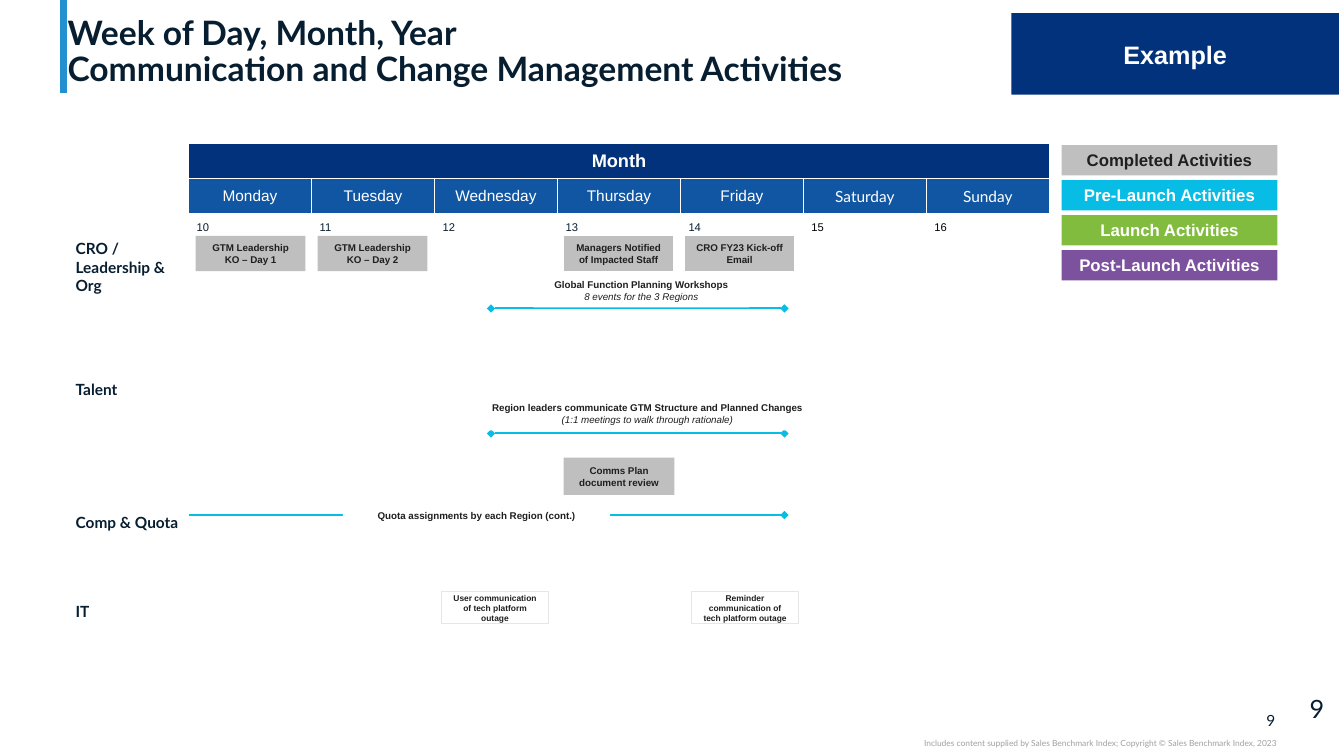
from lxml import etree
from pptx import Presentation
from pptx import util as u
from pptx.dml.color import RGBColor
from pptx.enum import shapes, text
from pptx.oxml import ns

NAVY, BLUE, INK, CYAN = "03327C", "1156A3", "071E31", "07BCE5"
GREY, DARK, WHITE = "BFBFBF", "1F1F1F", "FFFFFF"
LEFT, CENTER, RIGHT = text.PP_ALIGN.LEFT, text.PP_ALIGN.CENTER, text.PP_ALIGN.RIGHT
TOP, MIDDLE, BOTTOM = text.MSO_ANCHOR.TOP, text.MSO_ANCHOR.MIDDLE, text.MSO_ANCHOR.BOTTOM


def color(value):
    """Turn a hex string into a colour."""
    return RGBColor.from_string(value)


def lengths(*values):
    """Turn numbers of inches into lengths."""
    return [u.Inches(value) for value in values]


def set_font(font, size, ink, name="Arial", bold=False, italic=False):
    """Apply one set of character formats."""
    formats = {"size": u.Pt(size), "name": name, "bold": bold, "italic": italic}
    for attribute, value in formats.items():
        setattr(font, attribute, value)
    font.color.rgb = color(ink)


def set_frame(frame, anchor, margins):
    """Set wrapping, anchor and margins (left, top, right, bottom)."""
    formats = {"word_wrap": True, "vertical_anchor": anchor}
    sides = ("margin_left", "margin_top", "margin_right", "margin_bottom")
    formats.update(zip(sides, lengths(*margins)))
    for attribute, value in formats.items():
        setattr(frame, attribute, value)


def add_run(paragraph, words, align, **font):
    """Write aligned, formatted words in a paragraph."""
    paragraph.alignment = align
    run = paragraph.add_run()
    run.text = words
    set_font(run.font, **font)


def add_box(slide, box, words, fill=WHITE, line=None, size=7, ink=DARK, side=0.1, detail=None):
    """Add a filled rectangle with a bold label and an optional italic detail."""
    shape = slide.shapes.add_shape(shapes.MSO_SHAPE.RECTANGLE, *lengths(*box))
    shape.shadow.inherit = False
    shape.fill.solid()
    shape.fill.fore_color.rgb = color(fill)
    if line:
        shape.line.color.rgb = color(line)
        shape.line.width = u.Pt(0.75)
    else:
        shape.line.fill.background()
    frame = shape.text_frame
    set_frame(frame, MIDDLE, (side, 0.05, side, 0.05))
    add_run(frame.paragraphs[0], words, CENTER, size=size, ink=ink, bold=True)
    if detail:
        add_run(frame.add_paragraph(), detail, CENTER, size=size, ink=ink, italic=True)


def add_label(slide, box, words, size, ink, align, anchor):
    """Add a plain text box without margins."""
    frame = slide.shapes.add_textbox(*lengths(*box)).text_frame
    set_frame(frame, anchor, (0, 0, 0, 0))
    add_run(frame.paragraphs[0], words, align, size=size, ink=ink, name="Lato")


def add_line(slide, start, end, ink, width, ends=()):
    """Add a straight line with diamonds at the named ends."""
    straight = shapes.MSO_CONNECTOR.STRAIGHT
    connector = slide.shapes.add_connector(straight, *lengths(*start, *end))
    connector.line.color.rgb = color(ink)
    connector.line.width = u.Pt(width)
    for name in ends:
        etree.SubElement(connector.line._get_or_add_ln(), ns.qn(f"a:{name}"), type="diamond")
    etree.SubElement(connector._element.spPr, ns.qn("a:effectLst"))


def add_heading(slide, box):
    """Fill the title placeholder, with its accent line and the example tag."""
    left, top, width, height = box
    add_line(slide, (left - 0.04, 0), (left - 0.04, 0.92), "2391CF", 5)
    title = slide.shapes.title
    for attribute, value in zip(("left", "top", "width", "height"), lengths(*box)):
        setattr(title, attribute, value)
    set_frame(title.text_frame, BOTTOM, (0, 0, 0, 0))
    title.text_frame.auto_size = text.MSO_AUTO_SIZE.NONE
    paragraph = title.text_frame.paragraphs[0]
    paragraph.line_spacing = 0.9
    font = {"size": 24, "ink": INK, "name": "Lato", "bold": True}
    add_run(paragraph, "Week of Day, Month, Year", LEFT, **font)
    paragraph.add_line_break()
    add_run(paragraph, "Communication and Change Management Activities", LEFT, **font)
    add_box(slide, (left + 9.36, top + 0.09, 3.25, 0.81), "Example", NAVY, size=18, ink=WHITE)


def format_cell(cell):
    """Clear the fill of a cell and give it thin white borders."""
    cell.fill.background()
    properties = cell._tc.get_or_add_tcPr()
    for index, side in enumerate(("lnL", "lnR", "lnT", "lnB")):
        border = etree.Element(ns.qn(f"a:{side}"), w=str(u.Pt(0.75)))
        solid = etree.SubElement(border, ns.qn("a:solidFill"))
        etree.SubElement(solid, ns.qn("a:srgbClr"), val=WHITE)
        properties.insert(index, border)
    cell.text_frame.paragraphs[0]._p.get_or_add_endParaRPr().set("sz", "800")


def fill_cell(cell, words, align, anchor, fill=None, top=0.04, bottom=0.04, **font):
    """Write one calendar cell."""
    margins = zip(("left", "top", "right", "bottom"), lengths(0.08, top, 0.08, bottom))
    for side, value in margins:
        setattr(cell, f"margin_{side}", value)
    cell.vertical_anchor = anchor
    if fill:
        cell.fill.solid()
        cell.fill.fore_color.rgb = color(fill)
    add_run(cell.text_frame.paragraphs[0], words, align, **font)


def add_calendar(slide, box):
    """Add the week table: month, days, dates and work streams."""
    row_heights = (0.35, 0.35, 0.21, 0.85, 1.29, 1.35, 0.4)
    column_widths = (1.2,) + (1.22,) * 7
    table = slide.shapes.add_table(7, 8, *lengths(*box)).table
    table.first_row = table.horz_banding = False
    for row, height in zip(table.rows, lengths(*row_heights)):
        row.height = height
    for column, width in zip(table.columns, lengths(*column_widths)):
        column.width = width
    for cell in table.iter_cells():
        format_cell(cell)
    table.cell(0, 1).merge(table.cell(0, 7))
    table.cell(2, 0).merge(table.cell(3, 0))
    fill_cell(table.cell(0, 1), "Month", CENTER, MIDDLE, NAVY, size=13, ink=WHITE, bold=True)
    days = ("Monday", "Tuesday", "Wednesday", "Thursday", "Friday", "Saturday", "Sunday")
    for column, day in enumerate(days, 1):
        weekend = column > 5
        fill_cell(table.cell(1, column), day, CENTER, MIDDLE, BLUE, size=11, ink=WHITE,
                  name="Lato" if weekend else "Arial")
        fill_cell(table.cell(2, column), str(9 + column), LEFT, TOP, top=0.08, bottom=0,
                  size=8, ink="000000" if weekend else INK)
    streams = {2: "CRO / Leadership & Org", 4: "Talent", 5: "Comp & Quota", 6: "IT"}
    for row, stream in streams.items():
        top, bottom = (0.04, 0.04) if row == 2 else (0.08, 0)
        fill_cell(table.cell(row, 0), stream, LEFT, MIDDLE, WHITE, top, bottom,
                  size=11, ink=INK, name="Lato", bold=True)


def add_activities(slide, box):
    """Place the activity boxes and spans over the calendar."""
    left, top = box[:2]
    activities = (
        (1.27, 0.92, 1.09, 0.35, "GTM Leadership KO – Day 1", GREY, None, 7),
        (2.48, 0.92, 1.09, 0.35, "GTM Leadership KO – Day 2", GREY, None, 7),
        (4.92, 0.92, 1.09, 0.35, "Managers Notified of Impacted Staff", GREY, WHITE, 7),
        (6.12, 0.92, 1.09, 0.35, "CRO FY23 Kick-off Email", GREY, WHITE, 7),
        (4.92, 3.12, 1.1, 0.37, "Comms Plan document review", GREY, None, 7),
        (3.71, 4.45, 1.06, 0.32, "User communication of tech platform outage", WHITE, "E7E6E6", 6),
        (6.19, 4.45, 1.06, 0.32, "Reminder communication of tech platform outage", WHITE, "E7E6E6", 6),
    )
    for x, y, width, height, *label in activities:
        add_box(slide, (left + x, top + y, width, height), *label)
    both = ("headEnd", "tailEnd")
    spans = (
        (4.2, 1.64, both, (4.62, 1.29, 2.14, 0.34), "Global Function Planning Workshops",
         "8 events for the 3 Regions"),
        (4.2, 2.88, both, (3.67, 2.51, 4.16, 0.34),
         "Region leaders communicate GTM Structure and Planned Changes",
         "(1:1 meetings to walk through rationale)"),
        (1.2, 3.69, both[1:], (2.73, 3.6, 2.65, 0.18),
         "Quota assignments by each Region (cont.)", None),
    )
    for start, y, ends, (x, label_y, width, height), words, detail in spans:
        add_line(slide, (left + start, top + y), (left + 7.11, top + y), CYAN, 1.5, ends)
        add_box(slide, (left + x, top + label_y, width, height), words, detail=detail)


def add_legend(slide, box):
    """Stack the four activity phases."""
    left, top, width, height = box
    phases = (("Completed", GREY, DARK), ("Pre-Launch", CYAN, WHITE),
              ("Launch", "82BC3F", WHITE), ("Post-Launch", "7C519E", WHITE))
    for index, (phase, fill, ink) in enumerate(phases):
        add_box(slide, (left, top + index * 0.347, width, height), f"{phase} Activities",
                fill, size=12, ink=ink, side=0.03)


def add_footer(slide, box):
    """Add the page numbers and the copyright line."""
    left, top, width, height = box
    add_label(slide, (left + 4.82, top + 0.12, 0.33, 0.19), "9", 11, INK, RIGHT, MIDDLE)
    add_label(slide, (left, top + 0.39, 5.16, 0.1),
              "Includes content supplied by Sales Benchmark Index; Copyright © Sales Benchmark Index, 2023",
              6, "A0A0A0", RIGHT, TOP)
    add_label(slide, (left + width - 0.34, top, 0.34, 0.2), "9", 18, INK, LEFT, MIDDLE)


def main():
    """Build and save the weekly plan slide."""
    presentation = Presentation()
    presentation.slide_width, presentation.slide_height = lengths(13.33, 7.5)
    slide = presentation.slides.add_slide(presentation.slide_layouts[5])
    calendar = (0.67, 1.42, 9.74, 4.8)
    add_footer(slide, (7.5, 6.93, 5.83, 0.5))
    add_heading(slide, (0.67, 0.04, 11.99, 0.84))
    add_calendar(slide, calendar)
    add_activities(slide, calendar)
    add_legend(slide, (10.53, 1.44, 2.14, 0.3))
    presentation.save("out.pptx")


if __name__ == "__main__":
    main()
